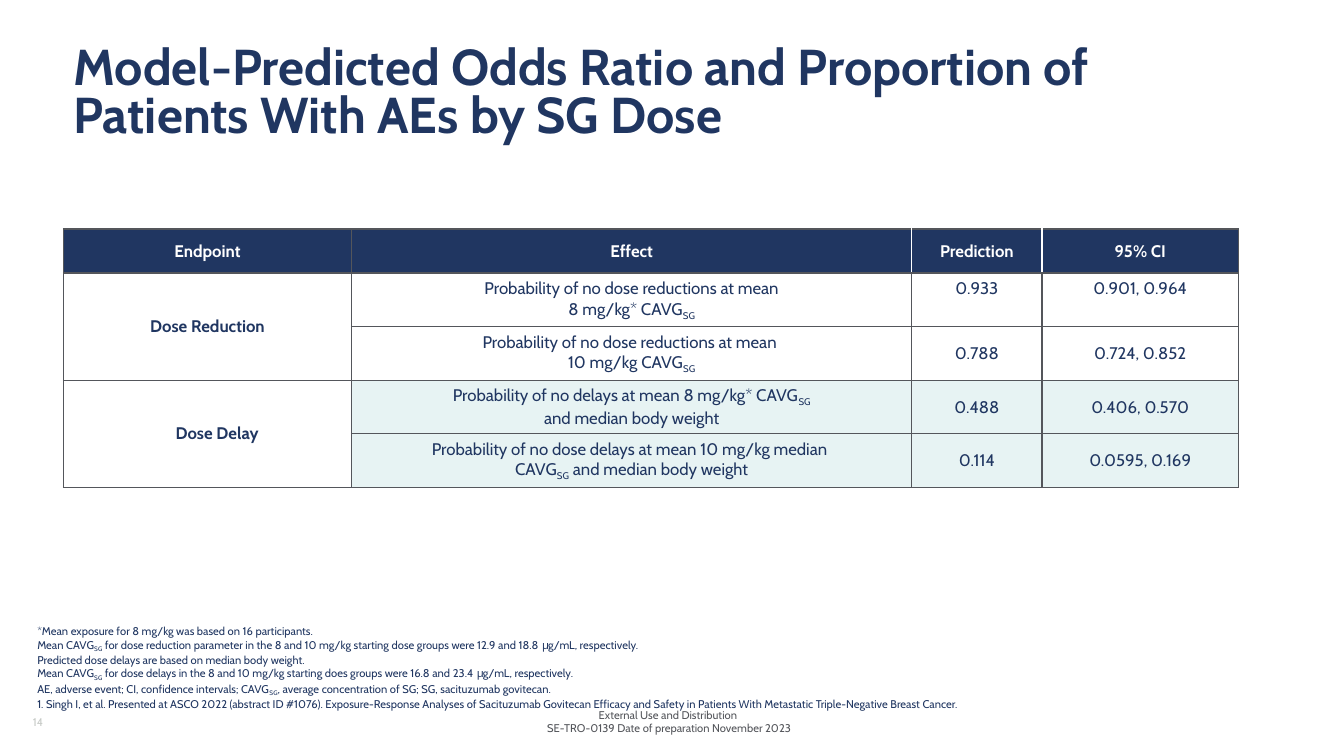
"""Build a slide with a table of predicted dose effects and its footnotes."""
from dataclasses import dataclass

from lxml.etree import SubElement
from pptx import Presentation
from pptx.dml.color import RGBColor as RGB
from pptx.enum.text import MSO_ANCHOR as ANCHOR, MSO_AUTO_SIZE as AUTO, PP_ALIGN as ALIGN
from pptx.oxml.ns import qn
from pptx.util import Cm, Pt


@dataclass(frozen=True)
class Theme:
    """Font, colours and type sizes of the slide."""
    font: str = "Cabin"
    navy: str = "203661"
    grey: str = "54565B"
    pale: str = "C6CAC6"
    mint: str = "E7F3F3"
    white: str = "FFFFFF"
    title: int = 36
    body: int = 12
    small: int = 8


T = Theme()
COLS = (7.26, 14.12, 3.28, 4.95)
HEAD_H, ROW_H = 1.11, 1.35
HEADER = ("Endpoint", "Effect", "Prediction", "95% CI")
GROUPS = (
    ("Dose Reduction", T.white, (
        ("Probability of no dose reductions at mean\n8 mg/kg* CAVG~SG~", "0.933", "0.901, 0.964"),
        ("Probability of no dose reductions at mean \n10 mg/kg CAVG~SG~", "0.788", "0.724, 0.852"))),
    ("Dose Delay", T.mint, (
        ("Probability of no delays at mean 8 mg/kg* CAVG~SG~\nand median body weight",
         "0.488", "0.406, 0.570"),
        ("Probability of no dose delays at mean 10 mg/kg median \nCAVG~SG~ and median body weight",
         "0.114", "0.0595, 0.169"))),
)
NOTES = (
    "*Mean exposure for 8 mg/kg was based on 16 participants.",
    "Mean CAVG~SG~ for dose reduction parameter in the 8 and 10 mg/kg starting dose groups "
    "were 12.9 and 18.8 μg/mL, respectively.",
    "Predicted dose delays are based on median body weight.",
    "Mean CAVG~SG~ for dose delays in the 8 and 10 mg/kg starting does groups "
    "were 16.8 and 23.4 μg/mL, respectively.",
    "AE, adverse event; CI, confidence intervals; CAVG~SG~, average concentration of SG; "
    "SG, sacituzumab govitecan.",
    "1. Singh I, et al. Presented at ASCO 2022 (abstract ID #1076). Exposure-Response Analyses of "
    "Sacituzumab Govitecan Efficacy and Safety in Patients With Metastatic Triple-Negative "
    "Breast Cancer.",
)
FOOTER = ("External Use and Distribution ", "SE-TRO-0139 Date of preparation November 2023")


def write(p, text, size=T.body, color=T.navy, bold=False, align=ALIGN.LEFT):
    """Fill a paragraph, lowering the parts between tildes."""
    p.alignment = align
    for i, part in enumerate(text.split("~")):
        for j, line in enumerate(part.split("\n")):
            if j:
                p.add_line_break()
            if not line:
                continue
            r = p.add_run()
            r.text = line
            r.font.name, r.font.size, r.font.bold = T.font, Pt(size), bold
            r.font.color.rgb = RGB.from_string(color)
            if i % 2:
                r.font._element.set("baseline", "-25000")


def add_text(s, box, lines, anchor=ANCHOR.MIDDLE, **fmt):
    """Add a text box with one paragraph per line."""
    tf = s.shapes.add_textbox(*map(Cm, box)).text_frame
    tf.word_wrap, tf.vertical_anchor = True, anchor
    for i, line in enumerate(lines):
        write(tf.add_paragraph() if i else tf.paragraphs[0], line, **fmt)


def add_title(s, text):
    """Place and format the title placeholder."""
    sp = s.shapes.title
    sp.left, sp.top, sp.width, sp.height = map(Cm, (1.6, 1.02, 30.48, 2.74))
    tf = sp.text_frame
    tf.word_wrap, tf.auto_size, tf.vertical_anchor = True, AUTO.NONE, ANCHOR.MIDDLE
    p = tf.paragraphs[0]
    p.line_spacing = 0.8
    write(p, text, size=T.title, bold=True)


def set_borders(cell, **colors):
    """Draw the four cell borders, grey unless a side is given."""
    pr = cell._tc.get_or_add_tcPr()
    for i, side in enumerate("LRTB"):
        ln = SubElement(pr, qn(f"a:ln{side}"), w=str(Pt(1)))
        fill = SubElement(ln, qn("a:solidFill"))
        SubElement(fill, qn("a:srgbClr"), val=colors.get(side, T.grey))
        pr.insert(i, ln)


def fill_cell(cell, text, fill, anchor=ANCHOR.MIDDLE, borders=None, **fmt):
    """Write and format one table cell."""
    cell.margin_left = cell.margin_right = cell.margin_top = cell.margin_bottom = Cm(0.13)
    cell.vertical_anchor = anchor
    cell.fill.solid()
    cell.fill.fore_color.rgb = RGB.from_string(fill)
    set_borders(cell, **(borders or {}))
    write(cell.text_frame.paragraphs[0], text, align=ALIGN.CENTER, **fmt)


def add_effects_table(s):
    """Add the table with one merged endpoint cell per group."""
    rows = 1 + sum(len(effects) for _, _, effects in GROUPS)
    frame = s.shapes.add_table(rows, len(COLS), Cm(1.6), Cm(5.77), Cm(sum(COLS)),
                               Cm(HEAD_H + ROW_H * (rows - 1)))
    tbl = frame.table
    tbl.first_row = tbl.horz_banding = False
    for col, width in zip(tbl.columns, COLS):
        col.width = Cm(width)
    for i, row in enumerate(tbl.rows):
        row.height = Cm(ROW_H if i else HEAD_H)
    for c, text in enumerate(HEADER):
        sides = {"L": T.white if c > 1 else T.grey, "R": T.white if c in (1, 2) else T.grey}
        fill_cell(tbl.cell(0, c), text, T.navy, borders=sides, color=T.white, bold=True)
    top = 1
    for endpoint, fill, effects in GROUPS:
        for r, values in enumerate(effects, top):
            fill_cell(tbl.cell(r, 0), endpoint if r == top else "", T.white, bold=True)
            for c, text in enumerate(values, 1):
                fill_cell(tbl.cell(r, c), text, fill, ANCHOR.TOP if r == 1 else ANCHOR.MIDDLE)
        tbl.cell(top, 0).merge(tbl.cell(top + len(effects) - 1, 0))
        top += len(effects)
    delay = tbl.cell(top - len(GROUPS[-1][2]), 0).text_frame.paragraphs[0]
    pr = delay._p.get_or_add_pPr()
    pr.set("marL", str(Cm(0.48)))
    pr.set("indent", "0")


def main():
    """Build and save the slide."""
    prs = Presentation()
    prs.slide_width, prs.slide_height = Cm(33.87), Cm(19.05)
    s = prs.slides.add_slide(prs.slide_layouts[5])
    add_text(s, (13.06, 17.78, 7.62, 0.81), FOOTER, size=T.small, color=T.grey, align=ALIGN.CENTER)
    add_title(s, "Model-Predicted Odds Ratio and Proportion of Patients With AEs by SG Dose")
    add_text(s, (0.58, 17.78, 7.62, 0.81), ["14"], size=T.small, color=T.pale)
    add_effects_table(s)
    add_text(s, (0.69, 16.18, 30.91, 1.85), NOTES, ANCHOR.BOTTOM, size=T.small)
    prs.save("out.pptx")


if __name__ == "__main__":
    main()
